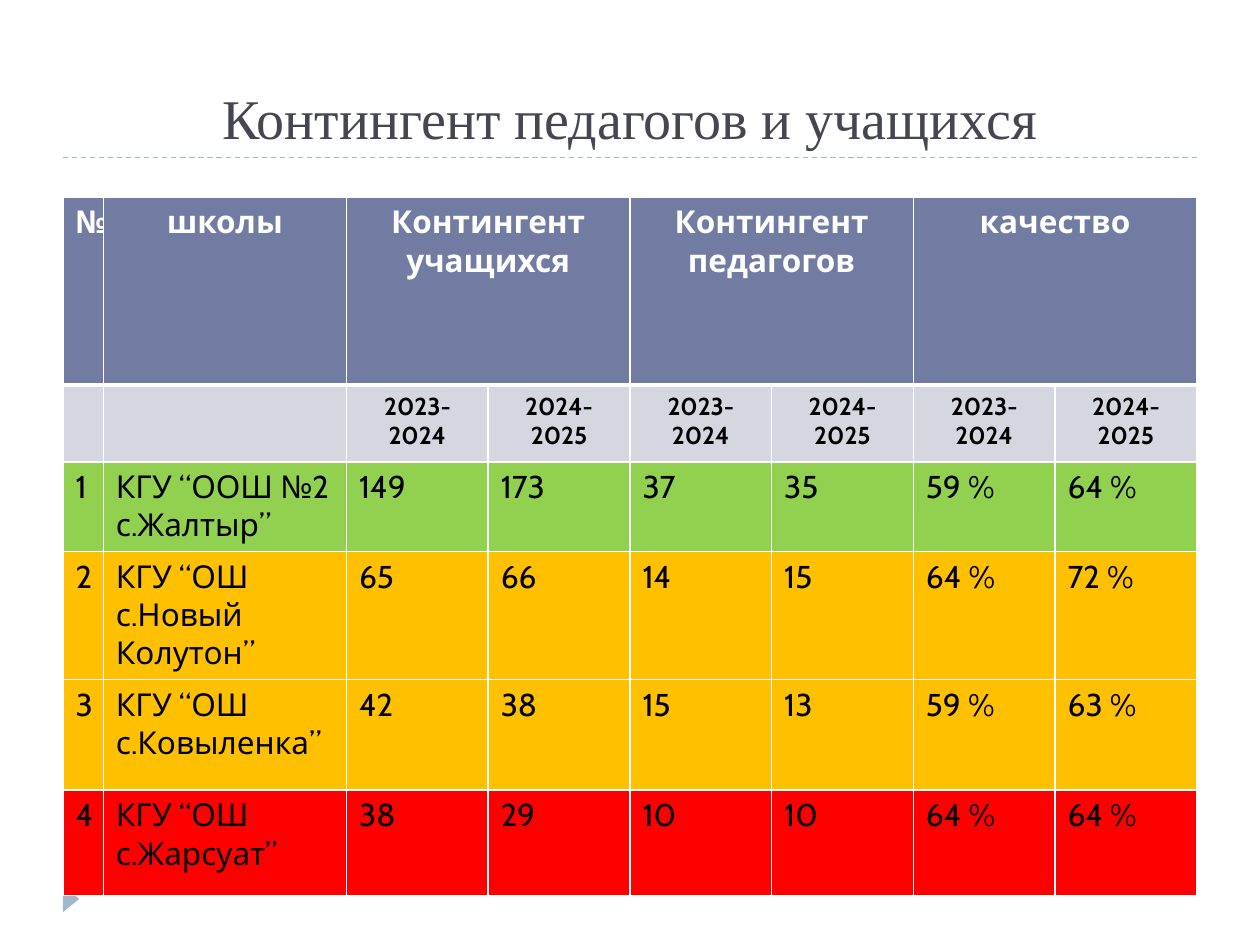
from lxml import etree
from pptx import Presentation
from pptx.dml.color import RGBColor
from pptx.enum import dml, shapes, text
from pptx.oxml import ns
from pptx.util import Pt

WHITE = RGBColor(0xFF, 0xFF, 0xFF)
BLACK = RGBColor(0x00, 0x00, 0x00)
TITLE_GREY = RGBColor(0x46, 0x46, 0x53)
PALE_BLUE = RGBColor(0x9F, 0xB8, 0xCD)
HEADER_BLUE = RGBColor(0x72, 0x7C, 0xA3)
YEAR_GREY = RGBColor(0xD5, 0xD7, 0xE0)
GREEN = RGBColor(0x92, 0xD0, 0x50)
AMBER = RGBColor(0xFF, 0xC0, 0x00)
RED = RGBColor(0xFF, 0x00, 0x00)

LEFT, WIDTH = 36, 648
YEARS = ["2023-2024", "2024-2025"]
COLUMNS = [23.1, 138.9] + [81] * 6
# Height, fill and cell texts of each row
ROWS = [
    (107.5, HEADER_BLUE, ["№", "школы", "Контингент учащихся", "",
                          "Контингент педагогов", "", "качество", ""]),
    (43.8, YEAR_GREY, ["", ""] + YEARS * 3),
    (45.4, GREEN, ["1", "КГУ “ООШ №2 с.Жалтыр”", "149", "173", "37", "35", "59 %", "64 %"]),
    (61.9, AMBER, ["2", "КГУ “ОШ с.Новый Колутон”", "65", "66", "14", "15", "64 %", "72 %"]),
    (63.4, AMBER, ["3", "КГУ “ОШ с.Ковыленка”", "42", "38", "15", "13", "59 %", "63 %"]),
    (60.1, RED, ["4", "КГУ “ОШ с.Жарсуат”", "38", "29", "10", "10", "64 %", "64 %"]),
]


def write(frame, words, font="Cabin", size=18, color=BLACK, bold=False, align=None):
    para = frame.paragraphs[0]
    para.alignment = align
    span = para.add_run()
    span.text = words
    span.font.name, span.font.size, span.font.bold = font, Pt(size), bold
    span.font.color.rgb = color


def add_borders(cell, top, bottom):
    props = cell._tc.get_or_add_tcPr()
    for side, width in (("L", 1), ("R", 1), ("T", top), ("B", bottom)):
        line = etree.SubElement(props, ns.qn(f"a:ln{side}"), w=str(Pt(width)))
        fill = etree.SubElement(line, ns.qn("a:solidFill"))
        etree.SubElement(fill, ns.qn("a:srgbClr"), val=str(WHITE))


deck = Presentation()
deck.slide_width, deck.slide_height = Pt(720), Pt(540)
page = deck.slides.add_slide(deck.slide_layouts[5])

# Title
title = page.shapes.title
title.left, title.top, title.width, title.height = Pt(LEFT), Pt(12.24), Pt(WIDTH), Pt(77.76)
title.text_frame.vertical_anchor = text.MSO_ANCHOR.BOTTOM
title.text_frame.auto_size = text.MSO_AUTO_SIZE.NONE
write(title.text_frame, "Контингент педагогов и учащихся", font="Times New Roman",
      size=32, color=TITLE_GREY, align=text.PP_ALIGN.CENTER)

# Dashed rules
for y in (90, 500.4):
    rule = page.shapes.add_connector(shapes.MSO_CONNECTOR.STRAIGHT,
                                     Pt(LEFT), Pt(y), Pt(LEFT + WIDTH), Pt(y))
    rule.line.color.rgb = PALE_BLUE
    rule.line.width = Pt(0.75)
    rule.line.dash_style = dml.MSO_LINE.DASH
    etree.SubElement(rule._element.spPr, ns.qn("a:effectLst"))

# Corner marker
marker = page.shapes.add_shape(shapes.MSO_SHAPE.ISOSCELES_TRIANGLE,
                               Pt(33.1), Pt(509), Pt(15), Pt(9.4))
marker.rotation = 90
marker.shadow.inherit = False
marker.fill.solid()
marker.fill.fore_color.rgb = PALE_BLUE
marker.line.fill.background()

# Table of schools
height = sum(row[0] for row in ROWS)
table = page.shapes.add_table(len(ROWS), len(COLUMNS), Pt(LEFT), Pt(112.6),
                              Pt(WIDTH), Pt(height)).table
for column, width in zip(table.columns, COLUMNS):
    column.width = Pt(width)

for r, (row_height, fill, words) in enumerate(ROWS):
    table.rows[r].height = Pt(row_height)
    for c, word in enumerate(words):
        cell = table.cell(r, c)
        add_borders(cell, top=3 if r == 1 else 1, bottom=3 if r == 0 else 1)
        cell.fill.solid()
        cell.fill.fore_color.rgb = fill
        if word:
            centred = r < 2 and c > 0
            write(cell.text_frame, word, size=14 if r == 1 else 18, bold=r < 2,
                  color=WHITE if r == 0 else BLACK,
                  align=text.PP_ALIGN.CENTER if centred else None)

# Each heading spans its two years
for c in (2, 4, 6):
    table.cell(0, c).merge(table.cell(0, c + 1))

deck.save("out.pptx")
